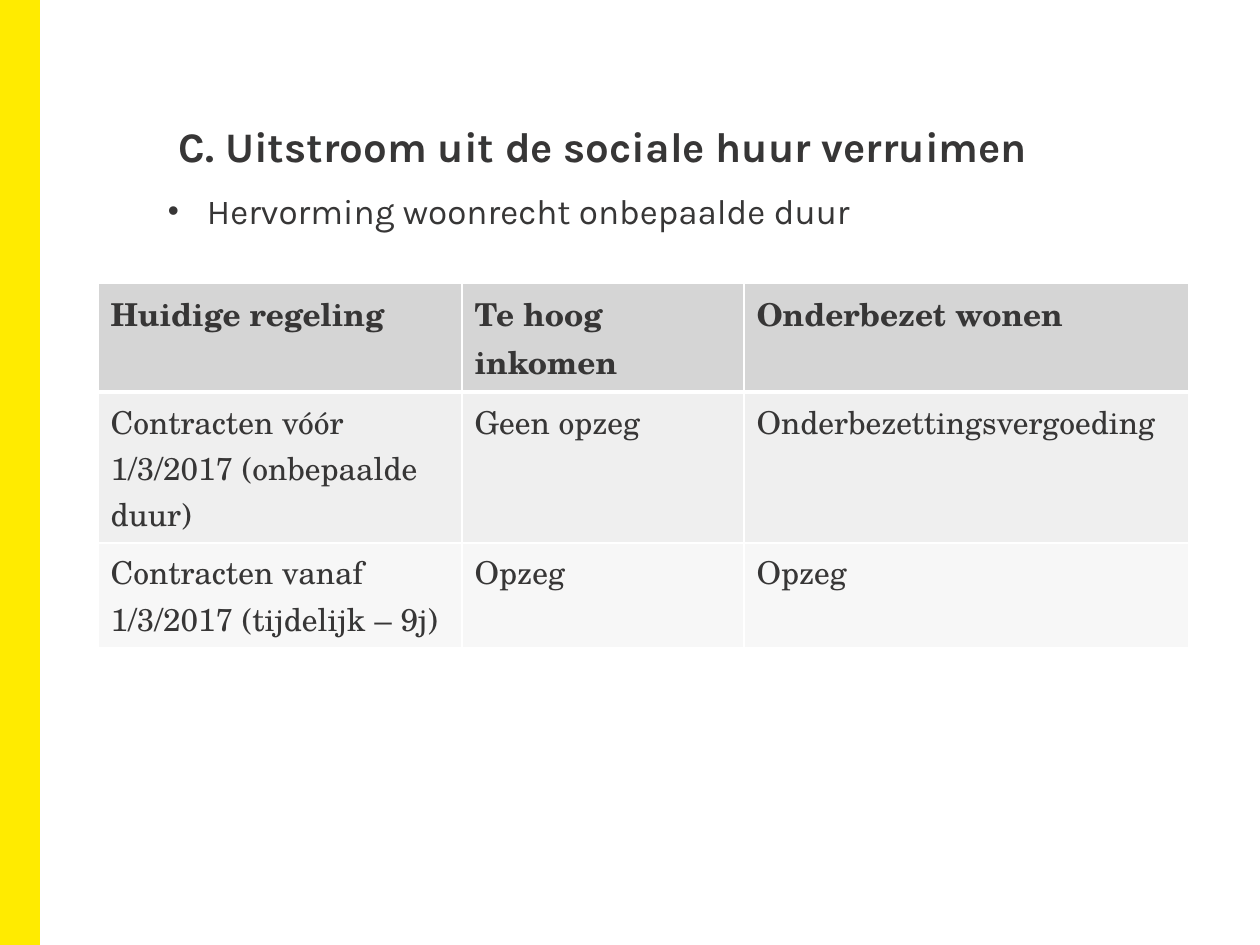
from pptx import Presentation
from pptx.dml.color import RGBColor
from pptx.enum.shapes import MSO_SHAPE as Shape
from pptx.oxml.ns import qn
from pptx.util import Pt
from lxml.etree import SubElement

PX = 914400 // 126
YELLOW = RGBColor(0xFF, 0xEB, 0x00)
INK = RGBColor(0x37, 0x36, 0x36)
WHITE = RGBColor(0xFF, 0xFF, 0xFF)
ROW_FILLS = [
    RGBColor(0xD5, 0xD5, 0xD5),
    RGBColor(0xEF, 0xEF, 0xEF),
    RGBColor(0xF7, 0xF7, 0xF7),
]
SANS = "Karla"
SERIF = "TeX Gyre Schola"

COLUMN_WIDTHS = [364, 282, 445]
ROW_HEIGHTS = [109, 151, 105]
RULES = [
    ["Huidige regeling", "Te hoog inkomen", "Onderbezet wonen"],
    ["Contracten vóór 1/3/2017 (onbepaalde duur)", "Geen opzeg", "Onderbezettingsvergoeding"],
    ["Contracten vanaf 1/3/2017 (tijdelijk – 9j)", "Opzeg", "Opzeg"],
]


def scale(*lengths):
    return [length * PX for length in lengths]


def add_span(para, text, font_name, size, bold=False):
    span = para.add_run()
    span.text = text
    span.font.name = font_name
    span.font.size = Pt(size)
    span.font.bold = bold
    span.font.color.rgb = INK


def add_side_band(page, left, top, width, height):
    band = page.shapes.add_shape(Shape.RECTANGLE, *scale(left, top, width, height))
    band.shadow.inherit = False
    band.fill.solid()
    band.fill.fore_color.rgb = YELLOW
    band.line.color.rgb = YELLOW
    band.line.width = Pt(1)


def add_text_box(page, left, top, width, height):
    box = page.shapes.add_textbox(*scale(left, top, width, height))
    frame = box.text_frame
    frame.word_wrap = True
    frame.margin_left = frame.margin_top = frame.margin_right = frame.margin_bottom = 0
    return frame.paragraphs[0]


def add_title(page, left, top, width, height):
    para = add_text_box(page, left, top, width, height)
    para.line_spacing = Pt(38)
    add_span(para, "C. Uitstroom uit de sociale huur verruimen", SANS, 24, True)


def add_bullet_text(page, left, top, width, height):
    para = add_text_box(page, left, top, width, height)
    para.line_spacing = 0.9
    indent = 39 * PX
    properties = para._p.get_or_add_pPr()
    properties.set("marL", str(indent))
    properties.set("indent", str(-indent))
    SubElement(properties, qn("a:buSzPct"), val="90000")
    SubElement(properties, qn("a:buFont"), typeface="Arial")
    SubElement(properties, qn("a:buChar"), char="•")
    add_span(para, "Hervorming woonrecht onbepaalde duur", SANS, 20)


def add_borders(cell, top_width, bottom_width):
    properties = cell._tc.get_or_add_tcPr()
    for side, width in (("L", 1), ("R", 1), ("T", top_width), ("B", bottom_width)):
        line = SubElement(properties, qn(f"a:ln{side}"), w=str(Pt(width)))
        fill = SubElement(line, qn("a:solidFill"))
        SubElement(fill, qn("a:srgbClr"), val=str(WHITE))


def add_rules_table(page, left, top):
    frame = page.shapes.add_table(
        len(RULES), len(COLUMN_WIDTHS),
        *scale(left, top, sum(COLUMN_WIDTHS), sum(ROW_HEIGHTS)),
    )
    table = frame.table
    table.horz_banding = False
    for column, width in zip(table.columns, COLUMN_WIDTHS):
        column.width = width * PX
    for index, (row, height, texts, color) in enumerate(
        zip(table.rows, ROW_HEIGHTS, RULES, ROW_FILLS)
    ):
        row.height = height * PX
        for cell, text in zip(row.cells, texts):
            add_borders(cell, 3 if index == 1 else 1, 3 if index == 0 else 1)
            cell.fill.solid()
            cell.fill.fore_color.rgb = color
            add_span(cell.text_frame.paragraphs[0], text, SERIF, 18, index == 0)


def main():
    deck = Presentation()
    deck.slide_width, deck.slide_height = scale(1260, 945)
    page = deck.slides.add_slide(deck.slide_layouts[6])
    add_side_band(page, 0, 0, 39, 945)
    add_title(page, 179, 104, 1011, 87)
    add_bullet_text(page, 168, 194, 1022, 556)
    add_rules_table(page, 98, 283)
    deck.save("out.pptx")


if __name__ == "__main__":
    main()
